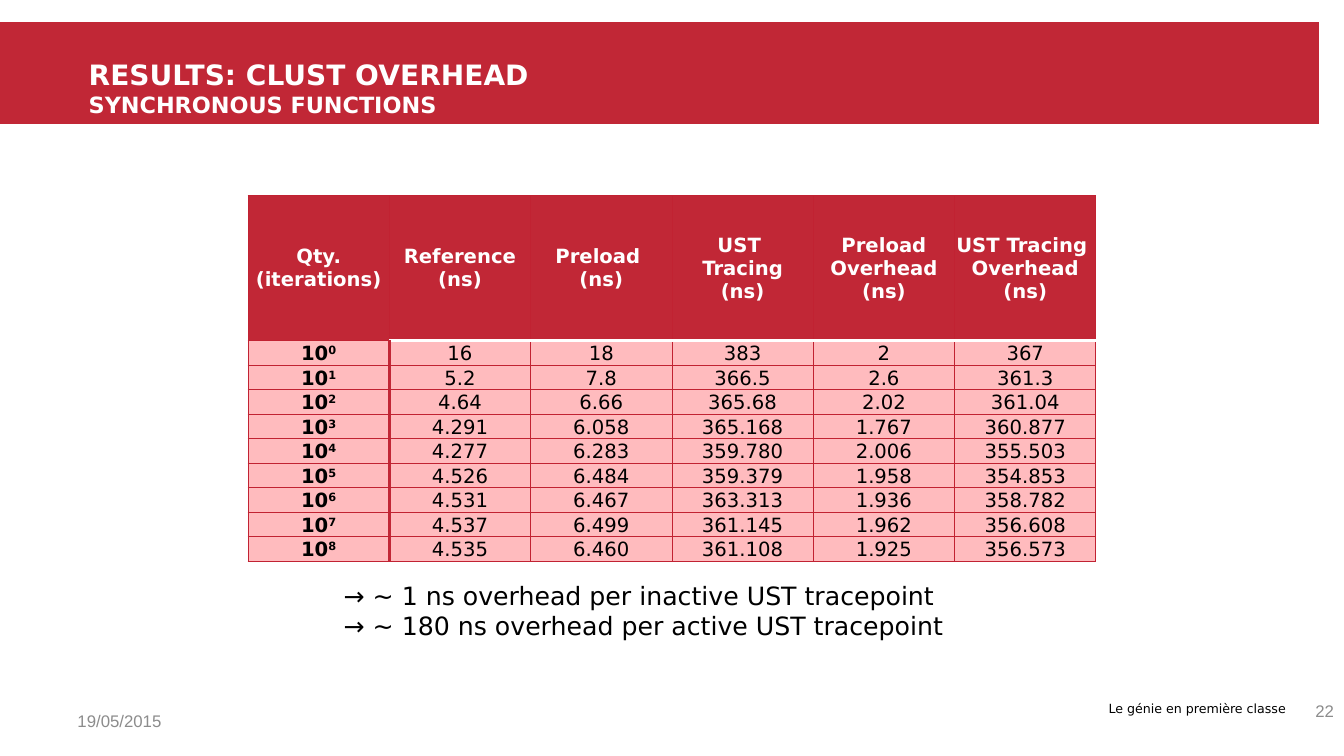
from lxml.etree import SubElement
from pptx import Presentation
from pptx.dml.color import RGBColor
from pptx.enum.shapes import MSO_SHAPE
from pptx.enum.text import MSO_ANCHOR, MSO_AUTO_SIZE, PP_ALIGN
from pptx.oxml.ns import qn
from pptx.util import Pt

PX = 9144
RED, BORDER, PINK, GREY = "C12736", "C12232", "FFBBBE", "8C8C8C"
WHITE, BLACK = "FFFFFF", "000000"
rgb = RGBColor.from_string


def px(*lengths):
    return [n * PX for n in lengths]


def style(p, size, color, bold=False, name="DejaVu Sans", align=PP_ALIGN.LEFT):
    p.alignment = align
    for r in p.runs:
        r.font.size = Pt(size)
        r.font.name = name
        r.font.bold = bold
        r.font.color.rgb = rgb(color)


prs = Presentation()
prs.slide_width, prs.slide_height = px(1333, 750)
s = prs.slides.add_slide(prs.slide_layouts[5])

title = s.shapes.title
title.left, title.top, title.width, title.height = px(78, 25, 1200, 125)
tf = title.text_frame
tf.auto_size = MSO_AUTO_SIZE.NONE
tf.vertical_anchor = MSO_ANCHOR.MIDDLE
p = tf.paragraphs[0]
p.text = "RESULTS: CLUST OVERHEAD\vSYNCHRONOUS FUNCTIONS"
style(p, 20, WHITE, bold=True)
p.runs[1].font.size = Pt(16)

band = s.shapes.add_shape(MSO_SHAPE.RECTANGLE, *px(0, 22, 1308, 101))
band.shadow.inherit = False
band.fill.solid()
band.fill.fore_color.rgb = rgb(RED)
band.line.fill.background()
title.element.addprevious(band.element)

headers = ["Qty.\v(iterations)", "Reference\v(ns)", "Preload \v(ns)",
           "UST \vTracing\v(ns)", "Preload\vOverhead\v(ns)",
           "UST Tracing \vOverhead\v(ns)"]
results = [
    ["10", "16", "18", "383", "2", "367"],
    ["10", "5.2", "7.8", "366.5", "2.6", "361.3"],
    ["10", "4.64", "6.66", "365.68", "2.02", "361.04"],
    ["10", "4.291", "6.058", "365.168", "1.767", "360.877"],
    ["10", "4.277", "6.283", "359.780", "2.006", "355.503"],
    ["10", "4.526", "6.484", "359.379", "1.958", "354.853"],
    ["10", "4.531", "6.467", "363.313", "1.936", "358.782"],
    ["10", "4.537", "6.499", "361.145", "1.962", "356.608"],
    ["10", "4.535", "6.460", "361.108", "1.925", "356.573"],
]
rows = [headers] + results
table = s.shapes.add_table(len(rows), len(headers), *px(246, 194, 841, 363)).table
table.horz_banding = False
for row in table.rows:
    row.height = 219 * PX // len(results)
table.rows[0].height = 144 * PX

for i, values in enumerate(rows):
    for j, value in enumerate(values):
        cell = table.cell(i, j)
        header = i == 0
        cell.margin_left, cell.margin_top, cell.margin_right, cell.margin_bottom = px(1, 1, 1, 0)
        cell.vertical_anchor = MSO_ANCHOR.MIDDLE if header else MSO_ANCHOR.BOTTOM
        p = cell.text_frame.paragraphs[0]
        p.text = value
        if j == 0 and not header:
            r = p.add_run()
            r.text = str(i - 1)
            r.font._element.set("baseline", "30000")
        style(p, 14, WHITE if header else BLACK, header or j == 0, align=PP_ALIGN.CENTER)

        lines = dict.fromkeys(["lnL", "lnR", "lnT", "lnB"], (BORDER, 0.75))
        if j > 0 and i < 2:
            lines["lnB" if header else "lnT"] = (WHITE, 2)
        if j < 2 and not header:
            lines["lnR" if j == 0 else "lnL"] = (RED, 2)
        tcPr = cell._tc.get_or_add_tcPr()
        for tag, (color, width) in lines.items():
            ln = SubElement(tcPr, qn("a:" + tag), w=str(Pt(width)))
            fill = SubElement(ln, qn("a:solidFill"))
            SubElement(fill, qn("a:srgbClr"), val=color)
        cell.fill.solid()
        cell.fill.fore_color.rgb = rgb(RED if header else PINK)

LEFT, RIGHT = PP_ALIGN.LEFT, PP_ALIGN.RIGHT
TOP, MIDDLE = MSO_ANCHOR.TOP, MSO_ANCHOR.MIDDLE
texts = [
    ("Le génie en première classe ", (878, 690, 411, 25), 9, BLACK, "DejaVu Sans", RIGHT, TOP),
    ("19/05/2015", (67, 695, 311, 40), 12, GREY, "Arial", LEFT, MIDDLE),
    ("22", (1022, 685, 311, 40), 12, GREY, "Arial", RIGHT, MIDDLE),
    ("→ ~ 1 ns overhead per inactive UST tracepoint\v"
     "→ ~ 180 ns overhead per active UST tracepoint",
     (331, 571, 627, 71), 18, BLACK, "DejaVu Sans", LEFT, TOP),
]
for text, box, size, color, name, align, anchor in texts:
    tf = s.shapes.add_textbox(*px(*box)).text_frame
    tf.word_wrap = True
    tf.vertical_anchor = anchor
    p = tf.paragraphs[0]
    p.text = text
    style(p, size, color, name=name, align=align)

prs.save("out.pptx")
